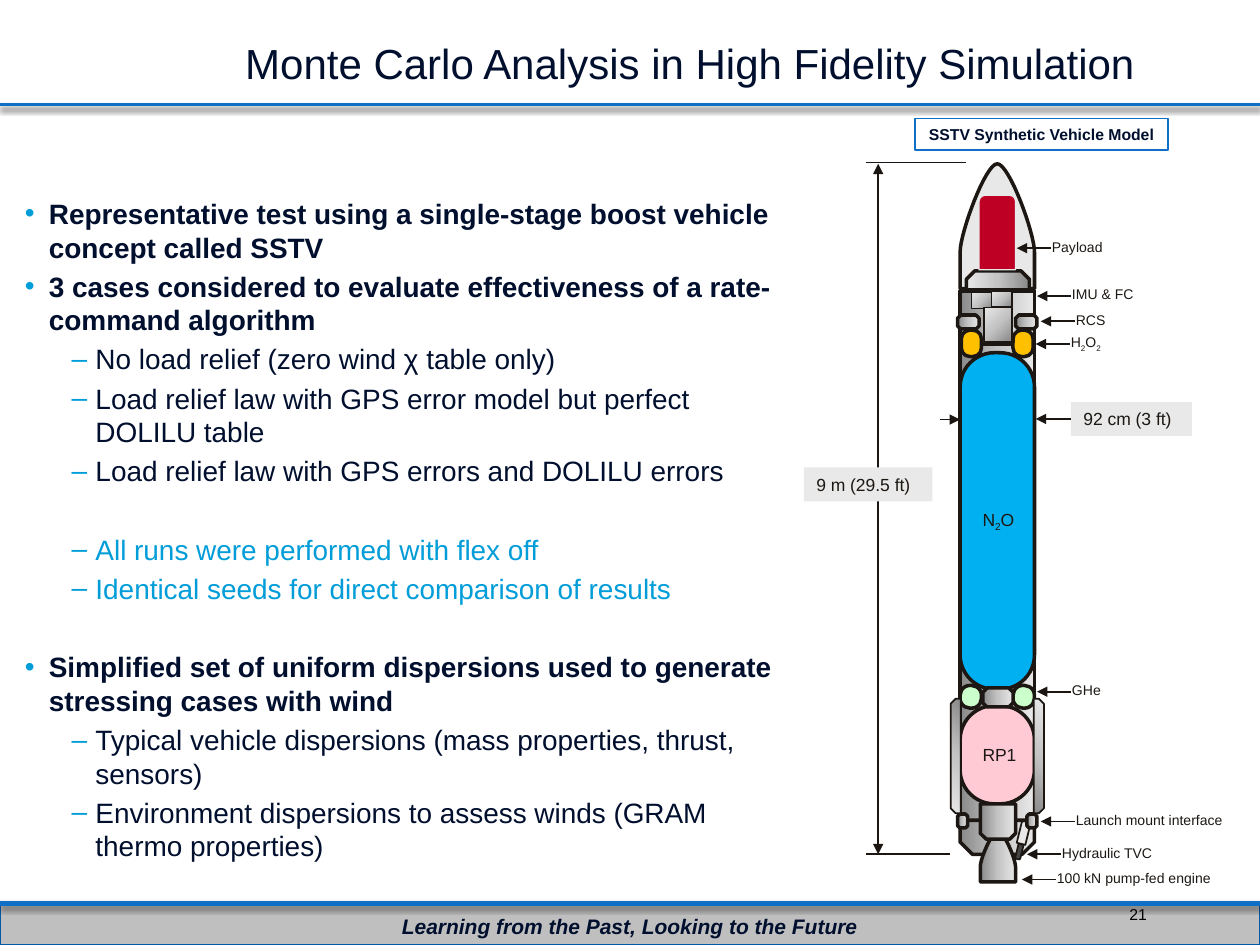
from copy import deepcopy
from itertools import groupby

from lxml import etree
from pptx import Presentation
from pptx.dml.color import RGBColor
from pptx.enum.shapes import MSO_CONNECTOR, MSO_SHAPE
from pptx.enum.text import MSO_ANCHOR, PP_ALIGN
from pptx.oxml.ns import qn
from pptx.util import Inches, Pt

RECT, ROUND = MSO_SHAPE.RECTANGLE, MSO_SHAPE.ROUNDED_RECTANGLE
SNIP, ROUND_TOP = MSO_SHAPE.SNIP_2_SAME_RECTANGLE, MSO_SHAPE.ROUND_2_SAME_RECTANGLE
STRAIGHT = MSO_CONNECTOR.STRAIGHT
LEFT, CENTER, RIGHT = PP_ALIGN.LEFT, PP_ALIGN.CENTER, PP_ALIGN.RIGHT
TOP, MIDDLE = MSO_ANCHOR.TOP, MSO_ANCHOR.MIDDLE

NAVY, BLUE, EDGE = RGBColor(0, 15, 46), RGBColor(15, 111, 198), RGBColor(5, 89, 166)
CYAN, BLACK, WHITE = RGBColor(0, 157, 217), RGBColor(0, 0, 0), RGBColor(255, 255, 255)
INK, ARROW = RGBColor(28, 23, 19), RGBColor(28, 22, 18)
BAND, PANEL, HULL = RGBColor(191, 191, 191), RGBColor(233, 233, 233), RGBColor(231, 232, 231)
OXIDIZER, FUEL, HELIUM = RGBColor(0, 176, 240), RGBColor(255, 202, 212), RGBColor(203, 255, 203)
PEROXIDE, PAYLOAD, PISTON = RGBColor(255, 192, 0), RGBColor(190, 0, 36), RGBColor(70, 70, 70)
METAL = (RGBColor(137, 137, 137), RGBColor(195, 196, 195), HULL)

# Grid of 100 columns by 75 rows with square cells
CELL = Inches(0.1)
COLS, ROWS = 100, 75
AXIS = 79.15  # centre column of the vehicle

BULLETS = [  # level, text, blank line above, colour
    (0, "Representative test using a single-stage boost vehicle concept called SSTV", False, NAVY),
    (0, "3 cases considered to evaluate effectiveness of a rate-command algorithm", False, NAVY),
    (1, "No load relief (zero wind χ table only)", False, NAVY),
    (1, "Load relief law with GPS error model but perfect DOLILU table", False, NAVY),
    (1, "Load relief law with GPS errors and DOLILU errors", False, NAVY),
    (1, "All runs were performed with flex off", True, CYAN),
    (1, "Identical seeds for direct comparison of results", False, CYAN),
    (0, "Simplified set of uniform dispersions used to generate stressing cases with wind", True, NAVY),
    (1, "Typical vehicle dispersions (mass properties, thrust, sensors)", False, NAVY),
    (1, "Environment dispersions to assess winds (GRAM thermo properties)", False, NAVY),
]
CALLOUTS = [  # text, column of the arrow tip, row, subscript digits
    ("Payload", 80.7, 19.7, False),
    ("IMU & FC", 82.3, 23.5, False),
    ("RCS", 82.6, 25.5, False),
    ("H2O2", 82.2, 27.3, True),
    ("GHe", 82.3, 54.9, False),
    ("Launch mount interface", 82.6, 65.2, False),
    ("Hydraulic TVC", 81.5, 67.8, False),
    ("100 kN pump-fed engine", 81.1, 69.8, False),
]


def cells(*counts):
    return [round(n * CELL) for n in counts]


def write(frame, text, size=8, color=INK, bold=False, italic=False, align=LEFT,
          anchor=TOP, wrap=True, subscript=False, paragraph=None):
    frame.word_wrap = wrap
    frame.vertical_anchor = anchor
    paragraph = paragraph or frame.paragraphs[0]
    paragraph.alignment = align
    parts = groupby(text, str.isdigit) if subscript else [(False, text)]
    for lowered, chars in parts:
        run = paragraph.add_run()
        run.text = "".join(chars)
        font = run.font
        font.name, font.size, font.bold, font.italic = "Arial", Pt(size), bold, italic
        font.color.rgb = color
        if lowered:
            run._r.get_or_add_rPr().set("baseline", "-25000")


def add_text(slide, box, text, **style):
    frame = slide.shapes.add_textbox(*cells(*box)).text_frame
    write(frame, text, **style)
    return frame


def cast_shadow(element):
    properties = element.spPr
    for old in properties.findall(qn("a:effectLst")):
        properties.remove(old)
    effects = etree.SubElement(properties, qn("a:effectLst"))
    outer = etree.SubElement(effects, qn("a:outerShdw"), blurRad=str(Pt(3)),
                             dist=str(Pt(2)), dir="5400000", rotWithShape="0")
    shade = etree.SubElement(outer, qn("a:srgbClr"), val=str(BLACK))
    etree.SubElement(shade, qn("a:alpha"), val="50000")


def paint(shape, fill, line, width, angle):
    shape.shadow.inherit = False
    if fill is METAL:
        shape.fill.gradient()
        gradient = shape._element.spPr.find(qn("a:gradFill"))
        stops = gradient.find(qn("a:gsLst"))
        stops.insert(1, deepcopy(stops[0]))
        stops[1].set("pos", "50000")
        for stop, color in zip(shape.fill.gradient_stops, METAL):
            stop.color.rgb = color
        gradient.find(qn("a:lin")).set("ang", str(angle * 60000))
    else:
        shape.fill.solid()
        shape.fill.fore_color.rgb = fill
    if line is None:
        shape.line.fill.background()
    else:
        shape.line.color.rgb = line
        shape.line.width = Pt(width)


def add_part(slide, kind, box, fill=METAL, line=INK, width=2, angle=180, adjust=(), turn=0):
    part = slide.shapes.add_shape(kind, *cells(*box))
    for i, value in enumerate(adjust):
        part.adjustments[i] = value
    part.rotation = turn
    paint(part, fill, line, width, angle)
    return part


def add_pair(slide, kind, box, turns=(0, 0), **style):
    """A part on the left and its mirror about the vehicle axis."""
    left, top, width, height = box
    for x, turn in zip((left, 2 * AXIS - left - width), turns):
        add_part(slide, kind, (x, top, width, height), turn=turn, **style)


def add_bell(slide, left, right, apex, shoulder, base, handle, fill):
    """Ogive outline: curved flanks meeting at the apex, straight skirt to the base."""
    span = right - left
    flank = []
    for i in range(17):
        t = i / 16
        a, b, c, d = (1 - t) ** 3, 3 * t * (1 - t) ** 2, 3 * t * t * (1 - t), t ** 3
        x = left + span * (b * 0 + c * handle + d * 0.5)
        y = (a * shoulder + b * (shoulder + 0.43 * (apex - shoulder) * 0.5) + (c + d) * apex)
        flank.append((x, y))
    mirrored = [(left + right - x, y) for x, y in reversed(flank[:-1])]
    outline = flank + mirrored + [(right, base), (left, base)]
    points = [tuple(cells(*point)) for point in outline]
    builder = slide.shapes.build_freeform(*points[0])
    builder.add_line_segments(points[1:], close=True)
    paint(builder.convert_to_shape(), fill, INK, 2, 0)


def add_line(slide, start, end, color=ARROW, width=1, heads=()):
    line = slide.shapes.add_connector(STRAIGHT, *cells(*start, *end))
    line.line.color.rgb = color
    line.line.width = Pt(width)
    stroke = line._element.spPr.find(qn("a:ln"))
    for head in heads:
        etree.SubElement(stroke, qn(head), type="triangle")
    etree.SubElement(line._element.spPr, qn("a:effectLst"))
    return line


def add_bullets(slide):
    frame = slide.shapes.add_textbox(*cells(1, 15.1, 62, 49.5)).text_frame
    for i, (level, text, gap, color) in enumerate(BULLETS):
        paragraph = frame.add_paragraph() if i else frame.paragraphs[0]
        properties = paragraph._p.get_or_add_pPr()
        properties.set("marL", str(Inches((0.19, 0.56)[level])))
        properties.set("indent", str(-Inches(0.19)))
        tint = etree.SubElement(properties, qn("a:buClr"))
        etree.SubElement(tint, qn("a:srgbClr"), val=str(CYAN))
        etree.SubElement(properties, qn("a:buFont"), typeface="Arial")
        etree.SubElement(properties, qn("a:buChar"), char="•–"[level])
        paragraph.line_spacing = Pt(19.2)
        paragraph.space_before = Pt(0 if i == 0 else 25.6 if gap else 3.2)
        write(frame, text, size=16, color=color, bold=level == 0, paragraph=paragraph)


def add_vehicle(slide):
    # Airframe and tanks
    add_part(slide, ROUND, (76.2, 27.3, 5.9, 38), angle=0, adjust=[0])
    for top, height, fill, name in ((28, 26.7, OXIDIZER, "N2O"), (56, 7.8, FUEL, "RP1")):
        tank = add_part(slide, ROUND, (76.2, top, 5.9, height), fill, adjust=[0.46])
        write(tank.text_frame, name, size=10, anchor=MIDDLE, wrap=False, subscript=name == "N2O")
    add_part(slide, SNIP, (76.2, 65.1, 5.9, 2.7), adjust=[0.36, 0], turn=180)
    add_pair(slide, ROUND, (76.2, 54.4, 1.7, 1.8), fill=HELIUM, adjust=[0.46])
    # Nose and avionics bay
    add_bell(slide, 76.2, 82.1, 13, 20, 22.9, 0.34, HULL)
    add_part(slide, SNIP, (76.7, 21.5, 5, 1.5), adjust=[0.44, 0])
    add_part(slide, ROUND, (76.2, 23.1, 5.9, 4.2), angle=0, adjust=[0])
    pod = {"adjust": [0.21, 0.23], "turns": (180, 180)}
    add_part(slide, SNIP, (78, 54.6, 2.4, 1.5), adjust=[0.21, 0.23], turn=180)
    add_pair(slide, ROUND, (76.3, 26.2, 1.6, 2.1), fill=PEROXIDE, adjust=[0.43])
    add_pair(slide, SNIP, (76, 25, 1.7, 1.1), **pod)
    for box in ((77.1, 23.2, 1.6, 1.3), (78.7, 23.1, 1.6, 1.3), (78.1, 24.4, 2.2, 2.7)):
        add_part(slide, RECT, box, width=1, angle=225)
    add_part(slide, ROUND_TOP, (77.7, 15.5, 2.9, 5.9), PAYLOAD, HULL, 0.75)
    # Engine, actuator, launch mounts and side strakes
    add_bell(slide, 77.8, 80.6, 66, 68.8, 70, 0.32, METAL)
    add_part(slide, SNIP, (77.8, 63.8, 2.8, 2.8), turn=180)
    add_part(slide, SNIP, (80.9, 65.2, 0.7, 1.8), HULL, width=1, turn=13.7)
    add_part(slide, SNIP, (80.7, 67, 0.4, 1.2), PISTON, width=1, adjust=[0, 0.17], turn=13.7)
    add_pair(slide, SNIP, (76, 64.6, 0.8, 1.1), **pod)
    add_pair(slide, SNIP, (71.3, 59.6, 9.1, 0.8), (90, 270), width=1, angle=45, adjust=[0, 0.5])


def add_dimensions(slide):
    add_line(slide, (69.7, 67.8), (69.7, 13), heads=("a:headEnd", "a:tailEnd"))
    add_line(slide, (68.7, 12.9), (76.7, 12.9))
    add_line(slide, (68.7, 67.8), (75.4, 67.8))
    add_line(slide, (74.6, 33.3), (76.2, 33.3), heads=("a:tailEnd",))
    length = add_part(slide, RECT, (63.8, 37.1, 10.2, 2.7), PANEL, None)
    diameter = add_part(slide, RECT, (85, 31.9, 9.6, 2.7), PANEL, None)
    write(length.text_frame, "9 m (29.5 ft)", size=10)
    write(diameter.text_frame, "92 cm (3 ft)", size=10)
    pointer = add_line(slide, (85, 33.25), (82.2, 33.25), heads=("a:tailEnd",))
    pointer.begin_connect(diameter, 1)


def main():
    deck = Presentation()
    deck.slide_width, deck.slide_height = cells(COLS, ROWS)
    slide = deck.slides.add_slide(deck.slide_layouts[6])
    # Footer band and rules
    band = add_part(slide, RECT, (0, 71.7, COLS, 3.3), BAND, EDGE, 0.75)
    cast_shadow(band._element)
    for row, width in ((8.3, 2), (71.7, 3)):
        cast_shadow(add_line(slide, (COLS, row), (0, row), BLUE, width)._element)
    add_text(slide, (0, 72, COLS, 3), "Learning from the Past, Looking to the Future",
             size=12, color=NAVY, bold=True, italic=True, align=CENTER)
    add_text(slide, (81.2, 70.6, 10.8, 4), "21", size=9, color=BLACK, align=RIGHT, anchor=MIDDLE)
    # Title and body
    add_text(slide, (15.4, 2.5, 78.7, 13.7), "Monte Carlo Analysis in High Fidelity Simulation",
             size=24, color=NAVY, align=CENTER)
    add_bullets(slide)
    # Vehicle diagram
    add_vehicle(slide)
    add_dimensions(slide)
    for text, tip, row, subscript in CALLOUTS:
        add_line(slide, (tip + 2.7, row), (tip, row), heads=("a:tailEnd",))
        add_text(slide, (tip + 1.8, row - 1.3, 16, 2.4), text, subscript=subscript)
    caption = add_part(slide, RECT, (72.6, 9.4, 20.1, 2.5), WHITE, BLUE, 1)
    write(caption.text_frame, "SSTV Synthetic Vehicle Model", size=9, color=NAVY, bold=True,
          align=CENTER, wrap=False)
    deck.save("out.pptx")


if __name__ == "__main__":
    main()
